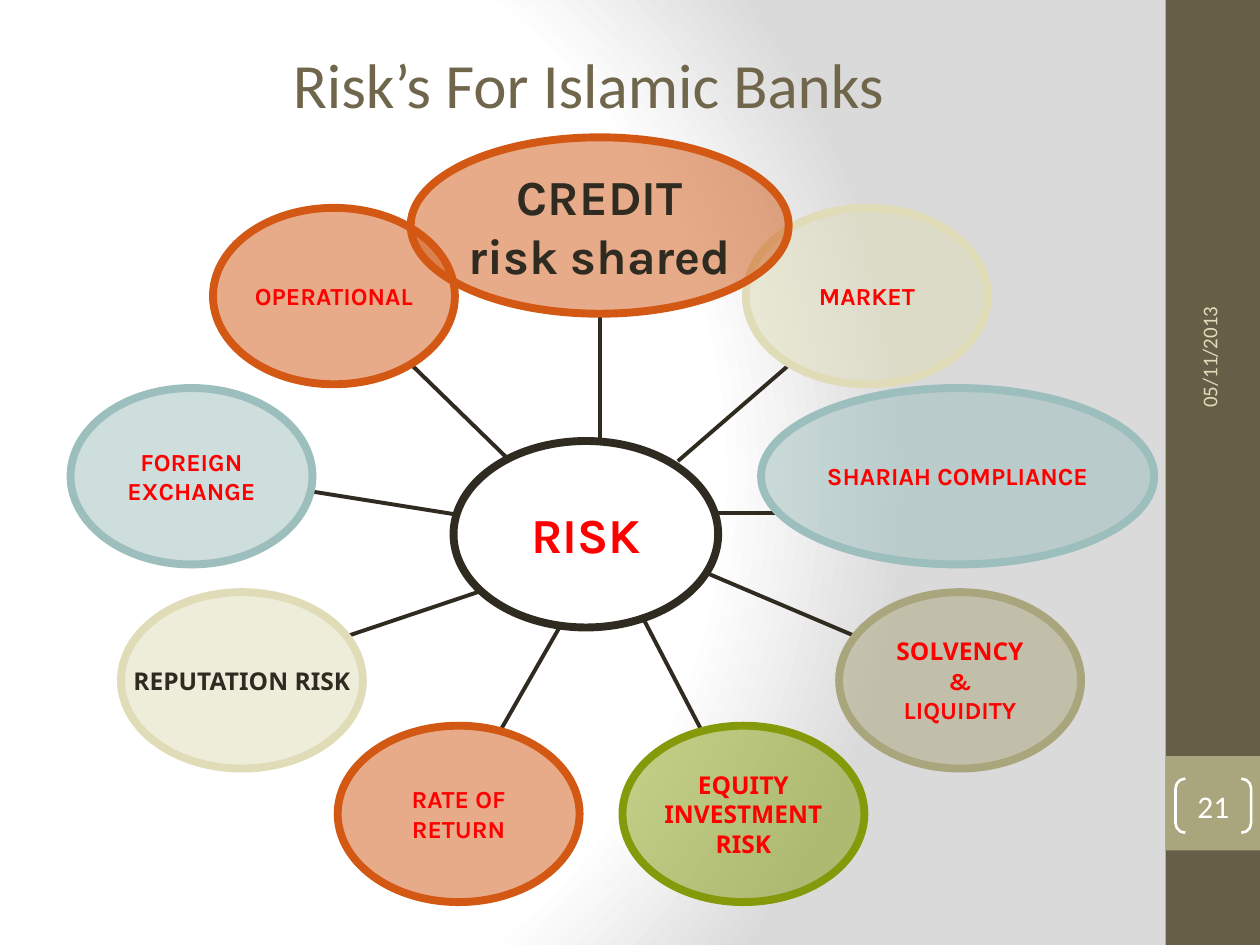
from dataclasses import dataclass

from pptx import Presentation
from pptx.dml.color import RGBColor
from pptx.enum.shapes import MSO_CONNECTOR as CONNECTOR, MSO_SHAPE as SHAPE
from pptx.enum.text import MSO_ANCHOR as ANCHOR, PP_ALIGN as ALIGN
from pptx.oxml import parse_xml
from pptx.oxml.ns import nsdecls, qn
from pptx.oxml.xmlchemy import OxmlElement
from pptx.util import Inches, Pt


@dataclass(frozen=True)
class Theme:
    # Colours
    dark: str = "2F2B20"
    title: str = "6F664C"
    sidebar: str = "675E47"
    khaki: str = "A9A57C"
    teal: str = "9CBEBD"
    orange: str = "D25814"
    cream: str = "DFDCB7"
    green: str = "849A0A"
    red: str = "FF0000"
    white: str = "FFFFFF"
    grey: str = "DADADA"
    # Fonts
    plain: str = "Calibri"
    karla: str = "Karla"
    noto: str = "Noto Sans"
    # Type sizes and line widths in points
    title_size: int = 36
    large: int = 28
    number: int = 18
    label: int = 14
    date: int = 12
    outline: float = 4.5
    spoke: float = 2.25
    bracket: float = 1.5


theme = Theme()


def write(shape, lines, size, color, bold=False, align=ALIGN.CENTER, inset=0.0, wrap=True):
    """Fill a shape with paragraphs, each given as (text, font)."""
    frame = shape.text_frame
    frame.word_wrap = wrap
    frame.vertical_anchor = ANCHOR.MIDDLE
    frame.margin_left = frame.margin_right = Inches(inset)
    frame.margin_top = frame.margin_bottom = Inches(inset / 2)
    for index, (text, font) in enumerate(lines):
        paragraph = frame.add_paragraph() if index else frame.paragraphs[0]
        paragraph.alignment = align
        run = paragraph.add_run()
        run.text = text
        run.font.name = font
        run.font.size = Pt(size)
        run.font.bold = bold
        run.font.color.rgb = RGBColor.from_string(color)


def add_shape(shapes, kind, box, fill=None, line=None, width=0, alpha=None):
    """Add a preset shape with an optional, possibly transparent, fill and outline."""
    shape = shapes.add_shape(kind, *map(Inches, box))
    shape.shadow.inherit = False
    if fill:
        shape.fill.solid()
        shape.fill.fore_color.rgb = RGBColor.from_string(fill)
    else:
        shape.fill.background()
    if alpha:
        transparency = OxmlElement("a:alpha")
        transparency.set("val", str(alpha * 1000))
        shape.element.spPr.find(qn("a:solidFill"))[0].append(transparency)
    if line:
        shape.line.color.rgb = RGBColor.from_string(line)
        shape.line.width = Pt(width)
    else:
        shape.line.fill.background()
    return shape


presentation = Presentation()
presentation.slide_width, presentation.slide_height = Inches(10), Inches(7.5)
slide = presentation.slides.add_slide(presentation.slide_layouts[5])

# Background: circular gradient, white to grey
stops = "".join(
    f'<a:gs pos="{position * 1000}"><a:srgbClr val="{color}"/></a:gs>'
    for position, color in ((0, theme.white), (75, theme.white), (100, theme.grey))
)
slide.element.cSld.insert(0, parse_xml(
    f'<p:bg {nsdecls("p", "a")}><p:bgPr><a:gradFill rotWithShape="1"><a:gsLst>{stops}</a:gsLst>'
    '<a:path path="circle"><a:fillToRect l="20000" t="50000" r="100000" b="50000"/></a:path>'
    '</a:gradFill><a:effectLst/></p:bgPr></p:bg>'
))

# Sidebar
add_shape(slide.shapes, SHAPE.RECTANGLE, (9.25, 0, 0.75, 7.5), theme.sidebar)
add_shape(slide.shapes, SHAPE.RECTANGLE, (9.25, 6, 0.75, 0.75), theme.khaki)

# Title
title = slide.shapes.title
title.left, title.top, title.width, title.height = map(Inches, (0.17, 0.25, 9, 0.82))
write(title, [("Risk’s For Islamic Banks", theme.plain)], theme.title_size, theme.title, inset=0.1)

# Risks around the hub: left, top, width, colour, spoke ends, paragraphs
oval_width, oval_height = 1.92, 1.4
karla, noto = theme.karla, theme.noto
risks = [
    (1.69, 1.65, oval_width, theme.orange, (4.05, 3.66, 3.26, 2.89), [("OPERATIONAL", karla)]),
    (0.56, 3.08, oval_width, theme.teal, (3.6, 4.08, 2.47, 3.9), [("FOREIGN EXCHANGE", karla)]),
    (0.96, 4.7, oval_width, theme.cream, (3.79, 4.7, 2.75, 5.05), [("REPUTATION RISK", noto)]),
    (2.68, 5.76, oval_width, theme.orange, (4.44, 4.98, 3.97, 5.8), [("RATE OF RETURN", karla)]),
    (4.94, 5.76, oval_width, theme.green, (5.09, 4.88, 5.57, 5.8),
     [("EQUITY INVESTMENT RISK", noto)]),
    (6.66, 4.7, oval_width, theme.khaki, (5.59, 4.54, 6.79, 5.05),
     [("SOLVENCY", noto), ("&", karla), ("LIQUIDITY", karla)]),
    (6.04, 3.08, 3.12, theme.teal, (5.7, 4.07, 6.19, 4.07), [("SHARIAH COMPLIANCE", karla)]),
    (5.92, 1.65, oval_width, theme.cream, (5.38, 3.66, 6.27, 2.89), [("MARKET", karla)]),
    (3.26, 1.09, 3, theme.orange, (4.76, 3.5, 4.76, 2.49), [("CREDIT risk shared", karla)]),
]
diagram = slide.shapes.add_group_shape().shapes
for left, top, width, color, ends, lines in risks:
    spoke = diagram.add_connector(CONNECTOR.STRAIGHT, *map(Inches, ends))
    spoke.line.color.rgb = RGBColor.from_string(theme.dark)
    spoke.line.width = Pt(theme.spoke)
    spoke.element.spPr.append(OxmlElement("a:effectLst"))

    oval = add_shape(diagram, SHAPE.OVAL, (left, top, width, oval_height),
                     color, color, theme.outline, alpha=50)
    name = lines[0][0]
    is_credit, is_reputation = name.startswith("CREDIT"), name.startswith("REPUTATION")
    write(oval, lines, theme.large if is_credit else theme.label,
          theme.dark if is_credit or is_reputation else theme.red,
          bold=True, wrap=not is_reputation)

# Hub
hub = add_shape(diagram, SHAPE.OVAL, (3.6, 3.5, 2.1, 1.48),
                theme.white, theme.dark, theme.outline, alpha=50)
write(hub, [("RISK", karla)], theme.large, theme.red, bold=True)

# Slide number in brackets
number = add_shape(slide.shapes, SHAPE.DOUBLE_BRACKET, (9.33, 6.18, 0.6, 0.43),
                   line=theme.white, width=theme.bracket)
number.adjustments[0] = 0.18
write(number, [("21", theme.plain)], theme.number, theme.white)

# Date, reading upwards
date = slide.shapes.add_textbox(*map(Inches, (8.26, 1.8, 2.67, 0.4)))
date.rotation = 270
write(date, [("05/11/2013", theme.plain)], theme.date, theme.cream, align=ALIGN.LEFT, inset=0.1)

presentation.save("out.pptx")
